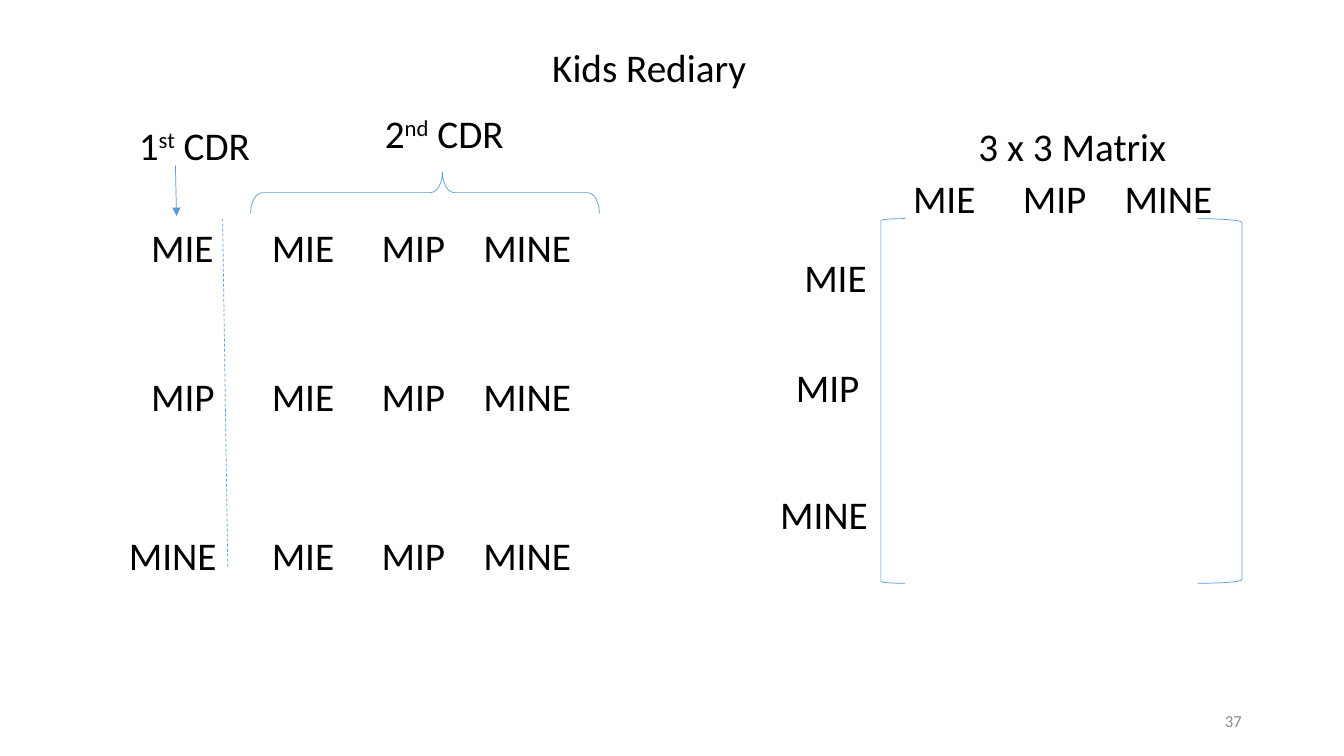
from dataclasses import dataclass

from pptx import Presentation
from pptx.dml.color import RGBColor
from pptx.enum.dml import MSO_LINE
from pptx.enum.shapes import MSO_CONNECTOR, MSO_SHAPE
from pptx.enum.text import MSO_ANCHOR, MSO_AUTO_SIZE, PP_ALIGN
from pptx.oxml.ns import qn
from pptx.util import Cm, Pt
from lxml.etree import SubElement


@dataclass(frozen=True)
class Theme:
    font: str = "Calibri"
    text: RGBColor = RGBColor(0, 0, 0)
    muted: RGBColor = RGBColor(0x8C, 0x8C, 0x8C)
    accent: RGBColor = RGBColor(0x5B, 0x9B, 0xD5)
    body_size: Pt = Pt(28)
    number_size: Pt = Pt(12)
    line_width: Pt = Pt(0.5)


THEME = Theme()
WORDS = ("MIE", "MIP", "MINE")
WORD_WIDTHS = {"MIE": 2.49, "MIP": 2.49, "MINE": 2.97}
COLUMN_OFFSETS = (0, 2.77, 5.33)
LABEL_HEIGHT = 1.45


def add_span(para, text, size=THEME.body_size, color=THEME.text, raised=False):
    span = para.add_run()
    span.text = text
    span.font.name = THEME.font
    span.font.size = size
    span.font.color.rgb = color
    if raised:
        span.font._element.set("baseline", "30000")


def add_title(page, text):
    title = page.shapes.title
    title.left, title.top, title.width, title.height = Cm(3.66), Cm(1.04), Cm(25.4), Cm(1.37)
    frame = title.text_frame
    frame.auto_size = MSO_AUTO_SIZE.NONE
    frame.vertical_anchor = MSO_ANCHOR.BOTTOM
    para = frame.paragraphs[0]
    para.alignment = PP_ALIGN.CENTER
    para.line_spacing = 0.9
    add_span(para, text)


def add_label(page, left, top, width, text, ordinal="", ending=""):
    box = page.shapes.add_textbox(Cm(left), Cm(top), Cm(width), Cm(LABEL_HEIGHT))
    box.text_frame.word_wrap = True
    para = box.text_frame.paragraphs[0]
    add_span(para, text)
    if ordinal:
        add_span(para, ordinal, raised=True)
        add_span(para, ending)


def add_word_row(page, left, top):
    for word, offset in zip(WORDS, COLUMN_OFFSETS):
        add_label(page, left + offset, top, WORD_WIDTHS[word], word)


def add_word_column(page, places):
    for word, (left, top) in zip(WORDS, places):
        add_label(page, left, top, WORD_WIDTHS[word], word)


def add_outline(page, kind, left, top, width, height):
    shape = page.shapes.add_shape(kind, Cm(left), Cm(top), Cm(width), Cm(height))
    shape.shadow.inherit = False
    shape.fill.background()
    shape.line.color.rgb = THEME.accent
    shape.line.width = THEME.line_width
    return shape


def add_line(page, start, end, dashed=False, arrow=False):
    line = page.shapes.add_connector(
        MSO_CONNECTOR.STRAIGHT, *(Cm(value) for value in (*start, *end))
    )
    line.line.color.rgb = THEME.accent
    line.line.width = THEME.line_width
    if dashed:
        line.line.dash_style = MSO_LINE.DASH
    properties = line._element.spPr
    if arrow:
        SubElement(properties.find(qn("a:ln")), qn("a:tailEnd"), type="triangle")
    SubElement(properties, qn("a:effectLst"))


def add_page_number(page, number):
    box = page.shapes.add_textbox(Cm(23.93), Cm(17.65), Cm(7.62), Cm(1.02))
    box.text_frame.word_wrap = True
    box.text_frame.vertical_anchor = MSO_ANCHOR.MIDDLE
    para = box.text_frame.paragraphs[0]
    para.alignment = PP_ALIGN.RIGHT
    add_span(para, number, THEME.number_size, THEME.muted)


def add_combinations(page):
    row_tops = (5.51, 9.25, 13.26)
    add_word_column(page, zip((3.56, 3.56, 3.0), row_tops))
    for top in row_tops:
        add_word_row(page, 6.6, top)
    add_label(page, 3.25, 2.92, 3.61, "1", "st", " CDR")
    add_label(page, 9.45, 2.62, 4.24, "2", "nd", " CDR")
    add_line(page, (5.61, 5.51), (5.74, 14.27), dashed=True)
    add_line(page, (4.42, 4.17), (4.45, 5.44), arrow=True)
    brace = add_outline(page, MSO_SHAPE.LEFT_BRACE, 10.19, 0.46, 1.04, 8.79)
    brace.rotation = 90
    brace.adjustments[0] = 0.29
    brace.adjustments[1] = 0.45


def add_matrix(page):
    add_label(page, 24.41, 2.95, 5.97, "3 x 3 Matrix")
    add_word_row(page, 22.76, 4.27)
    add_word_column(page, ((20.02, 6.25), (19.81, 9.04), (19.41, 12.24)))
    add_outline(page, MSO_SHAPE.LEFT_BRACKET, 22.2, 5.51, 0.61, 9.19)
    add_outline(page, MSO_SHAPE.RIGHT_BRACKET, 30.18, 5.51, 1.12, 9.19)


def main():
    deck = Presentation()
    deck.slide_width, deck.slide_height = Cm(33.87), Cm(19.05)
    page = deck.slides.add_slide(deck.slide_layouts.get_by_name("Title Only"))
    add_title(page, "Kids Rediary")
    add_combinations(page)
    add_matrix(page)
    add_page_number(page, "37")
    deck.save("out.pptx")


if __name__ == "__main__":
    main()
